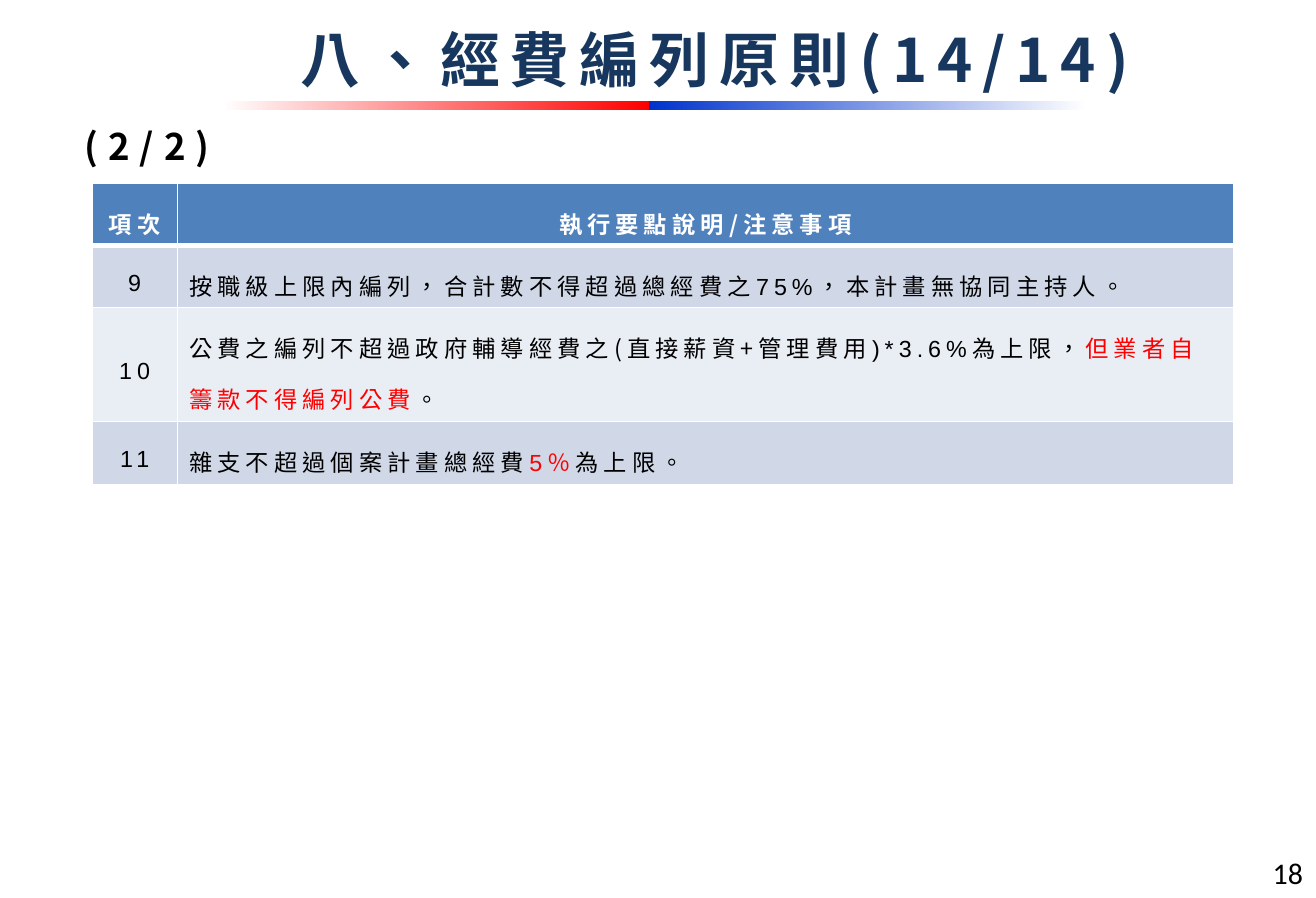
from dataclasses import dataclass

from lxml.etree import SubElement
from pptx import Presentation
from pptx.dml.color import RGBColor
from pptx.enum.lang import MSO_LANGUAGE_ID
from pptx.enum.shapes import MSO_SHAPE
from pptx.enum.text import MSO_ANCHOR, MSO_AUTO_SIZE, PP_ALIGN
from pptx.oxml.ns import qn
from pptx.util import Inches, Pt

TITLE = "八、經費編列原則(14/14)"
PART = "(2/2)"
PAGE_NUMBER = "18"
HEADERS = ("項次", "執行要點說明/注意事項")
# Each note is a list of (text, style); styles are looked up in RUN_STYLES.
NOTES = [
    ("9", [("按職級上限內編列，合計數不得超過總經費之", "cjk"), ("75%", "latin"),
           ("，本計畫無協同主持人。", "cjk")]),
    ("10", [("公費之編列不超過政府輔導經費之(直接薪資+管理費用", "cjk"), (")*3.6%", "latin"),
            ("為上限，", "cjk"), ("但業者自籌款不得編列公費", "cjk red"), ("。", "cjk")]),
    ("11", [("雜支不超過個案計畫總經費", "cjk"), ("5％", "latin red"), ("為上限。", "cjk")]),
]
COLUMN_WIDTHS = (0.71, 8.82)
ROW_HEIGHTS = (0.52, 0.52, 0.95, 0.53)
TABLE_LEFT, TABLE_TOP = 0.77, 1.53


@dataclass(frozen=True)
class Theme:
    cjk: str = "Noto Sans CJK SC"
    latin: str = "Arial"
    number: str = "Calibri"
    title_size: int = 36
    part_size: int = 22
    page_size: int = 18
    table_size: int = 14
    navy: str = "17375E"
    black: str = "000000"
    white: str = "FFFFFF"
    red: str = "FF0000"
    blue: str = "0033CC"
    header: str = "4F81BD"
    bands: tuple = ("D0D8E8", "E9EDF4")


THEME = Theme()
RUN_STYLES = {
    "cjk": (THEME.cjk, THEME.black),
    "latin": (THEME.latin, THEME.black),
    "cjk red": (THEME.cjk, THEME.red),
    "latin red": (THEME.latin, THEME.red),
}


def style_paragraph(paragraph, size, name, color, bold=False, spacing=0, align=PP_ALIGN.LEFT):
    """Set the paragraph font, with letter spacing in points."""
    paragraph.alignment = align
    font = paragraph.font
    font.size, font.name, font.bold = Pt(size), name, bold
    font.color.rgb = RGBColor.from_string(color)
    properties = paragraph._p.pPr.find(qn("a:defRPr"))
    properties.set("spc", str(spacing * 100))
    SubElement(properties, qn("a:ea")).set("typeface", THEME.cjk)
    for run in paragraph.runs:
        run.font.language_id = MSO_LANGUAGE_ID.TRADITIONAL_CHINESE


def add_text(slide, box, text, wrap=True, anchor=MSO_ANCHOR.TOP, **style):
    shape = slide.shapes.add_textbox(*map(Inches, box))
    frame = shape.text_frame
    frame.word_wrap, frame.vertical_anchor = wrap, anchor
    if not wrap:
        frame.auto_size = MSO_AUTO_SIZE.SHAPE_TO_FIT_TEXT
    frame.text = text
    style_paragraph(frame.paragraphs[0], **style)


def add_gradient_bar(slide, left, width, colors):
    shape = slide.shapes.add_shape(
        MSO_SHAPE.RECTANGLE, Inches(left), Inches(0.84), Inches(width), Inches(0.08))
    shape.shadow.inherit = False
    shape.line.fill.background()
    shape.fill.gradient()
    shape.fill.gradient_angle = 0
    for stop, color in zip(shape.fill.gradient_stops, colors):
        stop.color.rgb = RGBColor.from_string(color)


def paint_cell(cell, color, top=1, bottom=1):
    """Fill a cell and give it white borders, widths in points."""
    properties = cell._tc.get_or_add_tcPr()
    for side, width in (("L", 1), ("R", 1), ("T", top), ("B", bottom)):
        line = SubElement(properties, qn(f"a:ln{side}"), w=str(Pt(width)))
        fill = SubElement(line, qn("a:solidFill"))
        SubElement(fill, qn("a:srgbClr"), val=THEME.white)
    cell.fill.solid()
    cell.fill.fore_color.rgb = RGBColor.from_string(color)


def write_cell(cell, runs, name, color, bold=False, align=PP_ALIGN.LEFT):
    paragraph = cell.text_frame.paragraphs[0]
    paragraph.line_spacing = 1.5
    for text, style in runs:
        run = paragraph.add_run()
        run.text = text
        if style:
            run_name, run_color = RUN_STYLES[style]
            run.font.name = run_name
            run.font.color.rgb = RGBColor.from_string(run_color)
    style_paragraph(paragraph, THEME.table_size, name, color, bold, 3, align)


def add_notes_table(slide):
    table = slide.shapes.add_table(
        len(ROW_HEIGHTS), len(HEADERS), Inches(TABLE_LEFT), Inches(TABLE_TOP),
        Inches(sum(COLUMN_WIDTHS)), Inches(sum(ROW_HEIGHTS))).table
    for column, width in zip(table.columns, COLUMN_WIDTHS):
        column.width = Inches(width)
    for row, height in zip(table.rows, ROW_HEIGHTS):
        row.height = Inches(height)

    for column, header in enumerate(HEADERS):
        cell = table.cell(0, column)
        paint_cell(cell, THEME.header, bottom=3)
        write_cell(cell, [(header, None)], THEME.cjk, THEME.white, True, PP_ALIGN.CENTER)

    for row, (number, runs) in enumerate(NOTES, start=1):
        number_cell, note_cell = table.cell(row, 0), table.cell(row, 1)
        for cell in (number_cell, note_cell):
            paint_cell(cell, THEME.bands[(row - 1) % 2], top=3 if row == 1 else 1)
        number_cell.vertical_anchor = MSO_ANCHOR.MIDDLE
        write_cell(number_cell, [(number, None)], THEME.latin, THEME.black,
                   align=PP_ALIGN.CENTER)
        write_cell(note_cell, runs, THEME.cjk, THEME.black)


def main():
    presentation = Presentation()
    presentation.slide_width, presentation.slide_height = Inches(10.99), Inches(7.5)
    slide = presentation.slides.add_slide(presentation.slide_layouts[6])

    add_gradient_bar(slide, 1.85, 3.57, (THEME.white, THEME.red))
    add_gradient_bar(slide, 5.42, 3.66, (THEME.blue, THEME.white))
    add_text(slide, (8.87, 7.09, 2.11, 0.41), PAGE_NUMBER, size=THEME.page_size,
             name=THEME.number, color=THEME.black, align=PP_ALIGN.RIGHT)
    add_text(slide, (2.11, 0.07, 7.72, 0.77), TITLE, anchor=MSO_ANCHOR.BOTTOM,
             size=THEME.title_size, name=THEME.cjk, color=THEME.navy, bold=True,
             spacing=6, align=PP_ALIGN.CENTER)
    add_notes_table(slide)
    add_text(slide, (0.61, 0.99, 1.34, 0.47), PART, wrap=False, size=THEME.part_size,
             name=THEME.cjk, color=THEME.black, bold=True, spacing=6)
    presentation.save("out.pptx")


if __name__ == "__main__":
    main()
